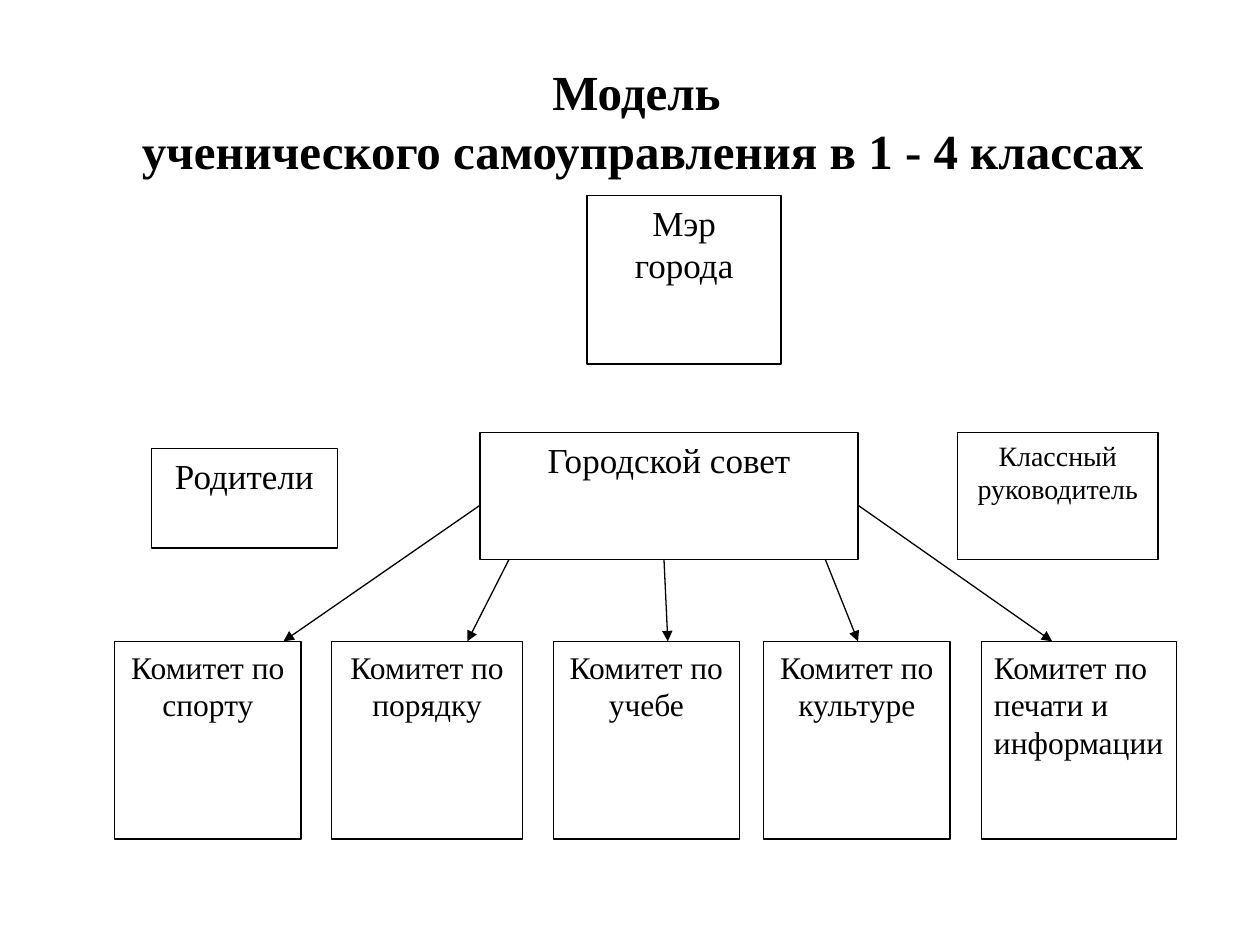
import pptx
import pptx.dml.color
import pptx.enum.shapes
import pptx.enum.text
import pptx.oxml
import pptx.oxml.ns
import pptx.util
from pptx.util import Inches

COLORS = {"ink": "000000", "paper": "FFFFFF"}
FONT = "Times New Roman"
CENTER = pptx.enum.text.PP_ALIGN.CENTER
LEFT = pptx.enum.text.PP_ALIGN.LEFT


def rgb(name):
    return pptx.dml.color.RGBColor.from_string(COLORS[name])


def write(frame, lines, size, bold=False, align=CENTER, after=0, wrap=True):
    frame.word_wrap = wrap
    frame.auto_size = pptx.enum.text.MSO_AUTO_SIZE.NONE
    frame.vertical_anchor = pptx.enum.text.MSO_ANCHOR.TOP
    for i, line in enumerate(lines):
        paragraph = frame.add_paragraph() if i else frame.paragraphs[0]
        paragraph.alignment = align
        paragraph.space_after = pptx.util.Pt(after)
        run = paragraph.add_run()
        run.text = line
        run.font.name = FONT
        run.font.size = pptx.util.Pt(size)
        run.font.bold = bold
        run.font.color.rgb = rgb("ink")


deck = pptx.Presentation()
deck.slide_width = Inches(10)
deck.slide_height = Inches(7.5)
slide = deck.slides.add_slide(deck.slide_layouts[5])

# Title
title = slide.shapes.title
title.left, title.top = Inches(0.98), Inches(0.44)
title.width, title.height = Inches(8.24), Inches(1.35)
write(title.text_frame, ["Модель ", "ученического самоуправления в 1 - 4 классах"],
      28, bold=True, wrap=False)

# Boxes: text, left, top, width, height, size, space after, alignment
council_left, council_top, council_width, council_height = 3.81, 3.43, 3, 1.01
boxes = [
    ("Мэр города", 4.66, 1.55, 1.54, 1.34, 20, 0, CENTER),
    ("Городской совет", council_left, council_top, council_width, council_height,
     20, 10, CENTER),
    ("Классный руководитель", 7.6, council_top, 1.59, council_height, 16, 0, CENTER),
    ("Родители", 1.2, 3.56, 1.48, 0.79, 20, 10, CENTER),
]

# Committees: subject, left, width, alignment
committee_top = 5.09
committees = [
    ("спорту", 0.91, 1.48, CENTER),
    ("порядку", 2.63, 1.52, CENTER),
    ("учебе", 4.39, 1.48, CENTER),
    ("культуре", 6.06, 1.48, CENTER),
    ("печати и информации", 7.79, 1.55, LEFT),
]
for subject, left, width, align in committees:
    boxes.append((f"Комитет по {subject}", left, committee_top, width, 1.57,
                  18, 10, align))

for text, left, top, width, height, size, after, align in boxes:
    box = slide.shapes.add_shape(
        pptx.enum.shapes.MSO_SHAPE.RECTANGLE,
        Inches(left), Inches(top), Inches(width), Inches(height))
    box.shadow.inherit = False
    box.fill.solid()
    box.fill.fore_color.rgb = rgb("paper")
    box.line.color.rgb = rgb("ink")
    box.line.width = pptx.util.Pt(0.75)
    write(box.text_frame, [text], size, align=align, after=after)

# Arrows from the council to each committee: start x, start y, end x
council_bottom = council_top + council_height
council_right = council_left + council_width
side_y = 4.01
arrows = [
    (council_left, side_y, 2.25),
    (4.04, council_bottom, 3.71),
    (5.27, council_bottom, 5.3),
    (6.55, council_bottom, 6.81),
    (council_right, side_y, 8.35),
]
for start_x, start_y, end_x in arrows:
    arrow = slide.shapes.add_connector(
        pptx.enum.shapes.MSO_CONNECTOR.STRAIGHT,
        Inches(start_x), Inches(start_y), Inches(end_x), Inches(committee_top))
    arrow.line.color.rgb = rgb("ink")
    arrow.line.width = pptx.util.Pt(0.75)
    arrow.line._get_or_add_ln().append(pptx.oxml.parse_xml(
        f'<a:tailEnd {pptx.oxml.ns.nsdecls("a")} type="triangle"/>'))
    arrow._element.spPr.append(pptx.oxml.parse_xml(
        f'<a:effectLst {pptx.oxml.ns.nsdecls("a")}/>'))

deck.save("out.pptx")
